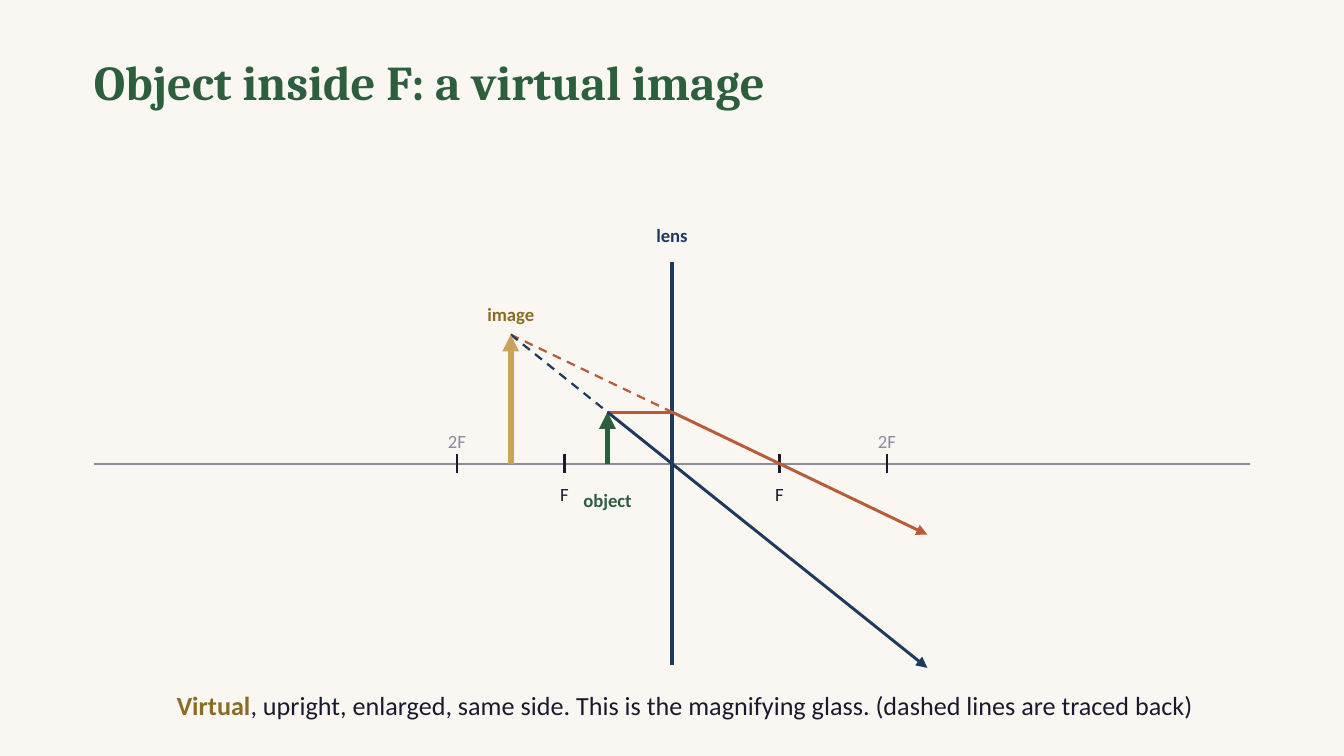
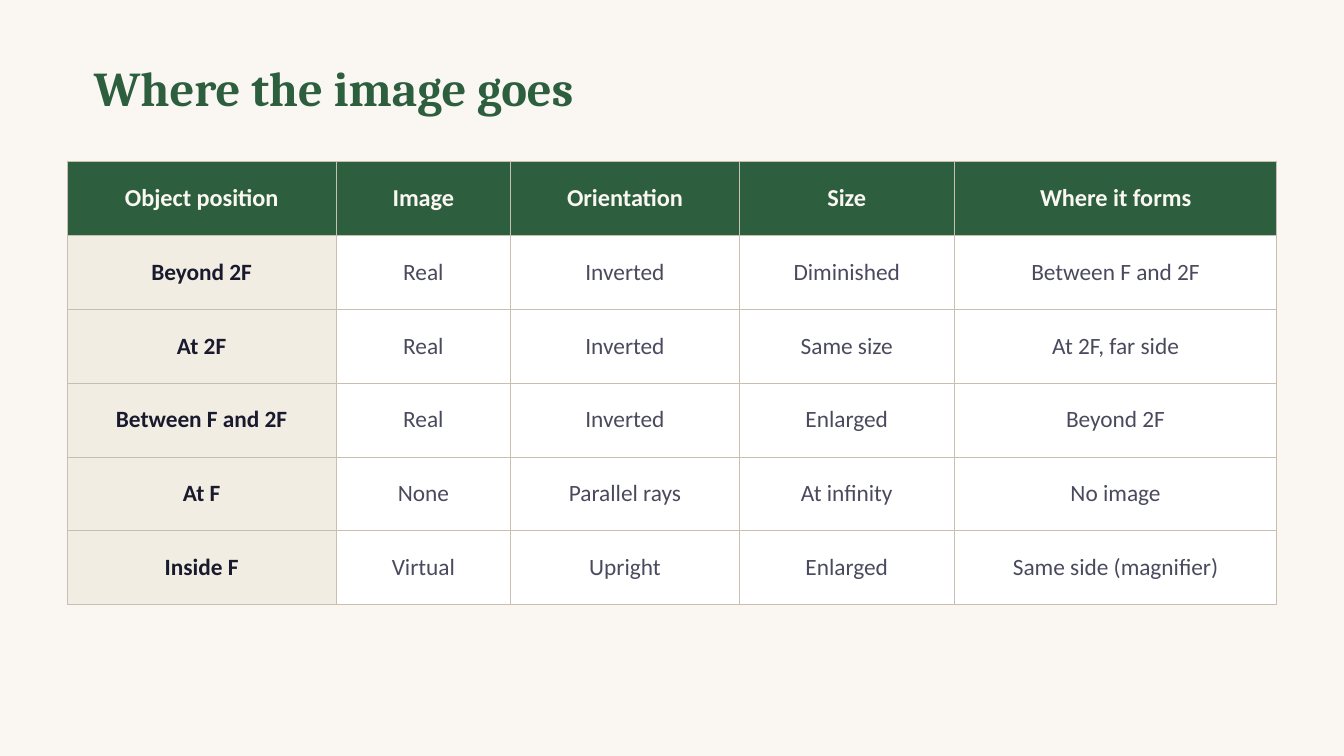
from dataclasses import dataclass

from lxml.etree import SubElement
from pptx import Presentation
from pptx.dml.color import RGBColor
from pptx.enum.dml import MSO_LINE
from pptx.enum.shapes import MSO_CONNECTOR
from pptx.enum.text import MSO_ANCHOR, PP_ALIGN
from pptx.oxml import parse_xml
from pptx.oxml.ns import nsdecls, qn
from pptx.util import Inches, Pt


@dataclass(frozen=True)
class Theme:
    paper: str = "FAF7F2"
    green: str = "2D5F3F"
    navy: str = "1E3A5F"
    ink: str = "1A1A2E"
    body: str = "4A4A5E"
    gray: str = "8B8B9C"
    rust: str = "B85C38"
    gold: str = "C8A35B"
    dark_gold: str = "8A6D24"
    cream: str = "F2EDE3"
    white: str = "FFFFFF"
    border: str = "C8BFB0"
    heading_font: str = "Cambria"
    body_font: str = "Calibri"
    title_size: float = 26
    caption_size: float = 14
    header_size: float = 13
    cell_size: float = 12.5
    label_size: float = 10
    axis_width: float = 1
    tick_width: float = 1.5
    lens_width: float = 2.5
    arrow_width: float = 3
    ray_width: float = 1.6
    traced_width: float = 1.2
    border_width: float = 0.5


@dataclass(frozen=True)
class Box:
    left: float
    top: float
    columns: float
    rows: float


THEME = Theme()
SLIDE_WIDTH = Inches(10)
SLIDE_HEIGHT = SLIDE_WIDTH * 9 // 16
GRID_COLUMNS = 100

TABLE_ROWS = [
    ["Object position", "Image", "Orientation", "Size", "Where it forms"],
    ["Beyond 2F", "Real", "Inverted", "Diminished", "Between F and 2F"],
    ["At 2F", "Real", "Inverted", "Same size", "At 2F, far side"],
    ["Between F and 2F", "Real", "Inverted", "Enlarged", "Beyond 2F"],
    ["At F", "None", "Parallel rays", "At infinity", "No image"],
    ["Inside F", "Virtual", "Upright", "Enlarged", "Same side (magnifier)"],
]
TABLE_COLUMNS = [20, 13, 17, 16, 24]


def grid(units):
    return round(SLIDE_WIDTH * units / GRID_COLUMNS)


def style_run(run, size, color, bold=False, font=THEME.body_font):
    run.font.name = font
    run.font.size = Pt(size)
    run.font.bold = bold
    run.font.color.rgb = RGBColor.from_string(color)


def add_text(slide, box, text, align=PP_ALIGN.CENTER, inset=False):
    shape = slide.shapes.add_textbox(
        grid(box.left), grid(box.top), grid(box.columns), grid(box.rows)
    )
    frame = shape.text_frame
    frame.word_wrap = True
    frame.vertical_anchor = MSO_ANCHOR.MIDDLE
    if not inset:
        frame.margin_left = frame.margin_right = 0
        frame.margin_top = frame.margin_bottom = 0
    frame.text = text
    paragraph = frame.paragraphs[0]
    paragraph.alignment = align
    return paragraph


def add_label(slide, center, text, color, bold=False):
    x, y = center
    paragraph = add_text(slide, Box(x - 6.5, y - 1.5, 13, 3), text)
    style_run(paragraph.runs[0], THEME.label_size, color, bold)


def add_line(slide, start, end, color, width, arrow=False, dashed=False):
    points = [grid(value) for value in (*start, *end)]
    connector = slide.shapes.add_connector(MSO_CONNECTOR.STRAIGHT, *points)
    connector.line.color.rgb = RGBColor.from_string(color)
    connector.line.width = Pt(width)
    if dashed:
        connector.line.dash_style = MSO_LINE.DASH
    properties = connector._element.spPr
    if arrow:
        SubElement(properties.find(qn("a:ln")), qn("a:tailEnd"), type="triangle")
    SubElement(properties, qn("a:effectLst"))


def add_slide(presentation):
    slide = presentation.slides.add_slide(presentation.slide_layouts[6])
    fill = slide.background.fill
    fill.solid()
    fill.fore_color.rgb = RGBColor.from_string(THEME.paper)
    return slide


def draw_title(slide, box, text):
    paragraph = add_text(slide, box, text, PP_ALIGN.LEFT, inset=True)
    style_run(paragraph.runs[0], THEME.title_size, THEME.green, True, THEME.heading_font)


def draw_lens_axis(slide, box, center, focal):
    x, y = center
    add_line(slide, (box.left, y), (box.left + box.columns, y), THEME.gray, THEME.axis_width)
    add_line(slide, (x, y - 15), (x, y + 15), THEME.navy, THEME.lens_width)
    marks = [("F", 1, 2.3, THEME.ink), ("2F", 2, -1.7, THEME.gray)]
    for text, multiple, label_drop, color in marks:
        for side in (-1, 1):
            mark = x + side * multiple * focal
            add_line(slide, (mark, y - 0.7), (mark, y + 0.7), THEME.ink, THEME.tick_width)
            add_label(slide, (mark, y + label_drop), text, color)
    add_label(slide, (x, y - 17), "lens", THEME.navy, True)


def draw_ray_diagram(slide, box):
    x, y = center = (box.left + box.columns / 2, box.top + 18.5)
    focal = 8
    distance = 0.6 * focal
    height = 0.48 * focal
    reach = 19
    magnification = focal / (focal - distance)

    object_tip = (x - distance, y - height)
    image_tip = (x - magnification * distance, y - magnification * height)
    lens_point = (x, y - height)
    focal_exit = (x + reach, y - height + reach * height / focal)
    center_exit = (x + reach, y + reach * height / distance)

    draw_lens_axis(slide, box, center, focal)
    add_line(slide, (object_tip[0], y), object_tip, THEME.green, THEME.arrow_width, arrow=True)
    add_label(slide, (object_tip[0], y + 2.7), "object", THEME.green, True)
    add_line(slide, object_tip, lens_point, THEME.rust, THEME.ray_width)
    rays = [
        (lens_point, focal_exit, THEME.rust),
        (object_tip, center_exit, THEME.navy),
    ]
    for start, end, color in rays:
        add_line(slide, start, end, color, THEME.ray_width, arrow=True)
        add_line(slide, image_tip, start, color, THEME.traced_width, dashed=True)
    add_line(slide, (image_tip[0], y), image_tip, THEME.gold, THEME.arrow_width, arrow=True)
    add_label(slide, (image_tip[0], image_tip[1] - 1.5), "image", THEME.dark_gold, True)


def draw_caption(slide, box, lead, rest):
    paragraph = add_text(slide, box, lead)
    paragraph.add_run().text = rest
    lead_run, rest_run = paragraph.runs
    style_run(lead_run, THEME.caption_size, THEME.dark_gold, True)
    style_run(rest_run, THEME.caption_size, THEME.ink)


def add_cell_borders(cell):
    properties = cell._tc.get_or_add_tcPr()
    for index, side in enumerate(("lnL", "lnR", "lnT", "lnB")):
        border = parse_xml(
            f'<a:{side} {nsdecls("a")} w="{Pt(THEME.border_width)}"><a:solidFill>'
            f'<a:srgbClr val="{THEME.border}"/></a:solidFill></a:{side}>'
        )
        properties.insert(index, border)


def style_cell(cell, text, fill, size, color, bold):
    cell.text = text
    cell.vertical_anchor = MSO_ANCHOR.MIDDLE
    cell.fill.solid()
    cell.fill.fore_color.rgb = RGBColor.from_string(fill)
    paragraph = cell.text_frame.paragraphs[0]
    paragraph.alignment = PP_ALIGN.CENTER
    style_run(paragraph.runs[0], size, color, bold)
    add_cell_borders(cell)


def draw_image_table(slide, box):
    frame = slide.shapes.add_table(
        len(TABLE_ROWS), len(TABLE_COLUMNS),
        grid(box.left), grid(box.top), grid(box.columns), grid(box.rows),
    )
    table = frame.table
    table.horz_banding = False
    for column, units in zip(table.columns, TABLE_COLUMNS):
        column.width = grid(box.columns * units / sum(TABLE_COLUMNS))
    for row_index, texts in enumerate(TABLE_ROWS):
        table.rows[row_index].height = grid(box.rows / len(TABLE_ROWS))
        for column_index, text in enumerate(texts):
            if row_index == 0:
                look = (THEME.green, THEME.header_size, THEME.paper, True)
            elif column_index == 0:
                look = (THEME.cream, THEME.cell_size, THEME.ink, True)
            else:
                look = (THEME.white, THEME.cell_size, THEME.body, False)
            style_cell(table.cell(row_index, column_index), text, *look)


def build_virtual_image_slide(presentation):
    slide = add_slide(presentation)
    draw_title(slide, Box(6, 3, 90, 6), "Object inside F: a virtual image")
    draw_ray_diagram(slide, Box(7, 16, 86, 34))
    draw_caption(
        slide, Box(6, 50, 90, 5), "Virtual",
        ", upright, enlarged, same side. This is the magnifying glass. "
        "(dashed lines are traced back)",
    )


def build_summary_slide(presentation):
    slide = add_slide(presentation)
    draw_title(slide, Box(6, 3.5, 90, 6), "Where the image goes")
    draw_image_table(slide, Box(5, 12, 90, 33))


def main():
    presentation = Presentation()
    presentation.slide_width = SLIDE_WIDTH
    presentation.slide_height = SLIDE_HEIGHT
    build_virtual_image_slide(presentation)
    build_summary_slide(presentation)
    presentation.save("out.pptx")


if __name__ == "__main__":
    main()
